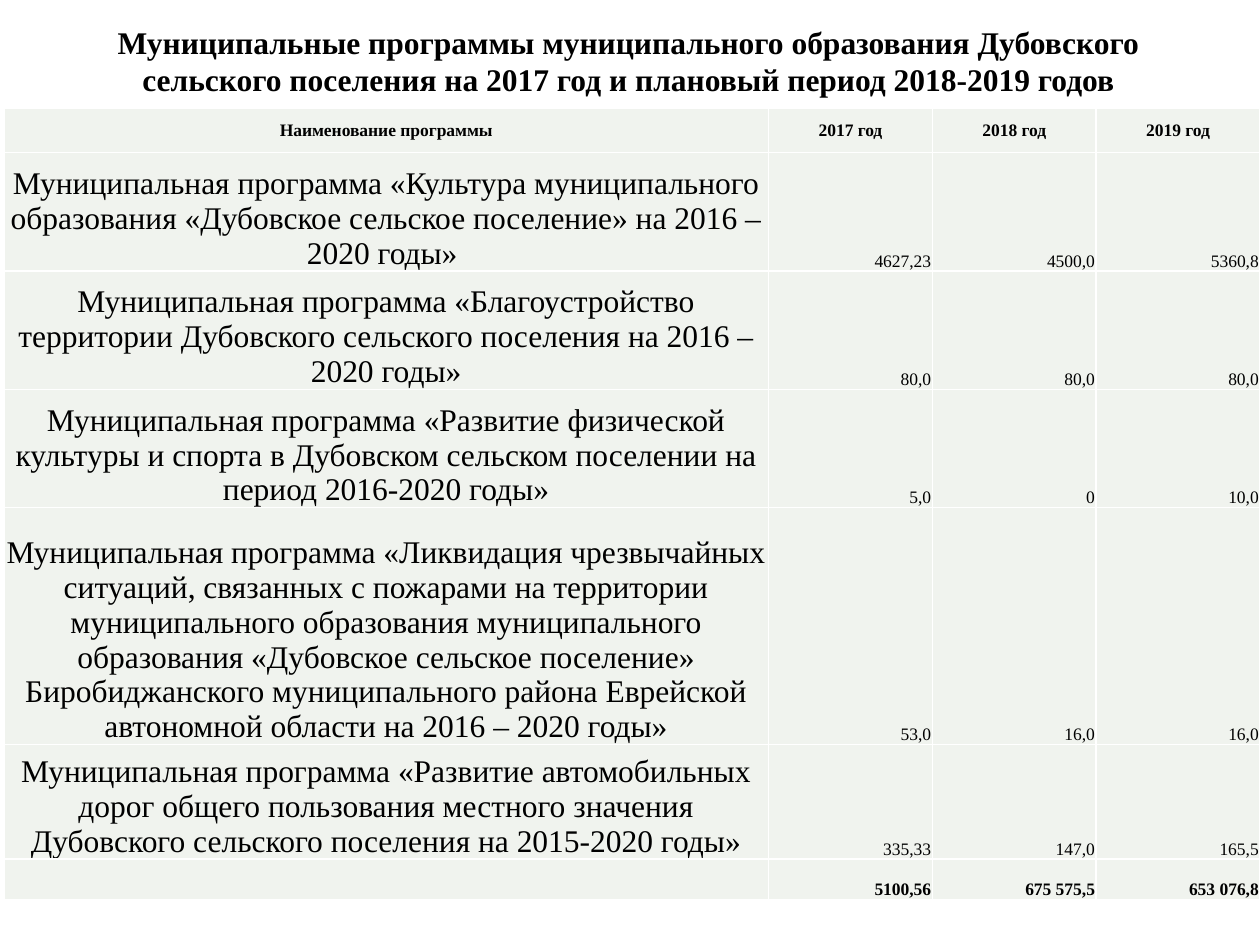
from lxml.etree import SubElement
from pptx import Presentation
from pptx.dml.color import RGBColor
from pptx.enum.text import MSO_ANCHOR as Anchor, PP_ALIGN as Align
from pptx.oxml.ns import qn
from pptx.util import Inches, Pt

COLORS = {"text": "000000", "cell": "F0F3EE", "border": "FFFFFF"}
FONT = "Times New Roman"
TITLE = ("Муниципальные программы муниципального образования Дубовского "
         "сельского поселения на 2017 год и плановый период 2018-2019 годов")
COLUMN_WIDTHS = [6.07, 1.3, 1.3, 1.3]
ROW_HEIGHTS = [0.35, 0.94, 0.94, 0.94, 1.88, 0.86, 0.32]
HEADER = ["Наименование программы", "2017 год", "2018 год", "2019 год"]
PROGRAMS = [
    ["Муниципальная программа «Культура муниципального образования "
     "«Дубовское сельское поселение» на 2016 – 2020 годы» ",
     "4627,23", "4500,0", "5360,8"],
    ["Муниципальная программа «Благоустройство территории Дубовского "
     "сельского поселения на 2016 – 2020 годы»",
     "80,0", "80,0", "80,0"],
    ["Муниципальная программа «Развитие физической культуры и спорта в "
     "Дубовском сельском поселении на период 2016-2020 годы»",
     "5,0", "0", "10,0"],
    ["Муниципальная программа «Ликвидация чрезвычайных ситуаций, связанных "
     "с пожарами на территории муниципального образования муниципального "
     "образования «Дубовское сельское поселение» Биробиджанского "
     "муниципального района Еврейской автономной области на 2016 – 2020 годы»",
     "53,0", "16,0", "16,0"],
    ["Муниципальная программа «Развитие автомобильных дорог общего "
     "пользования местного значения Дубовского сельского поселения "
     "на 2015-2020 годы»",
     "335,33", "147,0", "165,5"],
]
TOTALS = ["", "5100,56", "675 575,5", "653 076,8"]


def write(frame, text, size, bold, align):
    """Put one styled run into the first paragraph of a text frame."""
    paragraph = frame.paragraphs[0]
    paragraph.alignment = align
    run = paragraph.add_run()
    run.text = text
    run.font.name = FONT
    run.font.size = Pt(size)
    run.font.bold = bold
    run.font.color.rgb = RGBColor.from_string(COLORS["text"])


def add_title(slide):
    """Add the centred slide heading."""
    heading = slide.shapes.add_textbox(
        Inches(0.66), Inches(0.13), Inches(8.66), Inches(0.71))
    heading.text_frame.word_wrap = True
    write(heading.text_frame, TITLE, 18, True, Align.CENTER)


def style_cell(cell, anchor):
    """Give a cell its borders, fill, insets and vertical anchor."""
    properties = cell._tc.get_or_add_tcPr()
    for side in ("a:lnL", "a:lnR", "a:lnT", "a:lnB"):
        border = SubElement(properties, qn(side), w=str(Pt(1)))
        border_fill = SubElement(border, qn("a:solidFill"))
        SubElement(border_fill, qn("a:srgbClr"), val=COLORS["border"])
    cell.fill.solid()
    cell.fill.fore_color.rgb = RGBColor.from_string(COLORS["cell"])
    cell.margin_left = cell.margin_right = cell.margin_top = Inches(0.01)
    cell.margin_bottom = 0
    cell.vertical_anchor = anchor


def add_budget_table(slide):
    """Add the table of programmes with yearly amounts and totals."""
    rows = [HEADER, *PROGRAMS, TOTALS]
    budget = slide.shapes.add_table(
        len(rows), len(HEADER), Inches(0.03), Inches(0.86),
        Inches(sum(COLUMN_WIDTHS)), Inches(sum(ROW_HEIGHTS))).table
    budget.first_row = budget.horz_banding = False
    for column, width in zip(budget.columns, COLUMN_WIDTHS):
        column.width = Inches(width)
    for row, height in zip(budget.rows, ROW_HEIGHTS):
        row.height = Inches(height)
    for r, texts in enumerate(rows):
        is_header = r == 0
        bold = texts in (HEADER, TOTALS)
        for c, text in enumerate(texts):
            cell = budget.cell(r, c)
            style_cell(cell, Anchor.MIDDLE if is_header else Anchor.BOTTOM)
            if text:
                size = 18 if c == 0 and not is_header else 10
                align = Align.CENTER if c == 0 or is_header else Align.RIGHT
                write(cell.text_frame, text, size, bold, align)


def main():
    """Build the slide and save the presentation."""
    presentation = Presentation()
    presentation.slide_width = Inches(10)
    presentation.slide_height = Inches(7.5)
    slide = presentation.slides.add_slide(presentation.slide_layouts[6])
    add_title(slide)
    add_budget_table(slide)
    presentation.save("out.pptx")


if __name__ == "__main__":
    main()
